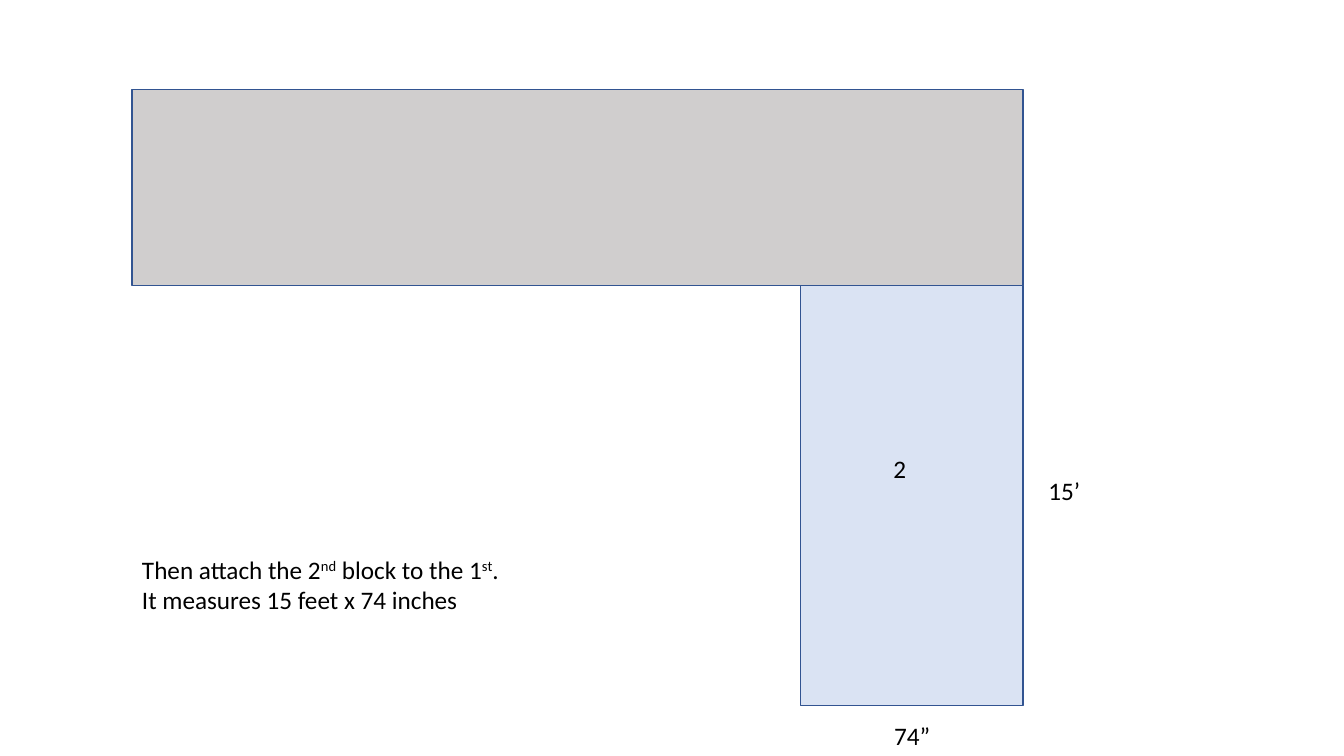
"""Build the slide that attaches the second block to the first."""
import pptx
import pptx.dml.color
import pptx.enum.shapes
import pptx.enum.text
import pptx.util

THEME = {
    "first": "D0CECE", "second": "DAE3F3", "edge": "325491",
    "text": "000000", "font": "Calibri", "size": 18, "line": 1,
}

deck = pptx.Presentation()
deck.slide_width = pptx.util.Inches(13.33)
deck.slide_height = pptx.util.Inches(7.5)
slide = deck.slides.add_slide(deck.slide_layouts[6])
col, row = deck.slide_width / 100, deck.slide_height / 100


def place(left, top, width, height):
    return [int(n) for n in (left * col, top * row, width * col, height * row)]


def tint(name):
    return pptx.dml.color.RGBColor.from_string(THEME[name])


left, top, long, deep = 9.83, 11.87, 66.3, 25.87
wide, tall = long / 4, 55.6
right, joint = left + long, top + deep

blocks = [
    ("first", left, top, long, deep),
    ("second", right - wide, joint, wide, tall),
]
for name, *area in blocks:
    block = slide.shapes.add_shape(
        pptx.enum.shapes.MSO_SHAPE.RECTANGLE, *place(*area))
    block.shadow.inherit = False
    block.fill.solid()
    block.fill.fore_color.rgb = tint(name)
    block.line.color.rgb = tint("edge")
    block.line.width = pptx.util.Pt(THEME["line"])

step = [["Then attach the 2", "nd", " block to the 1", "st", "."],
        ["It measures 15 feet x 74 inches"]]
labels = [
    ([["2"]], 66.47, 59.33, 0.98, 5.33, 0),
    (step, left, 72.67, 29.56, 9.47, 0.1),
    ([["15’"]], 77.27, 62.27, 3.9, 5.33, 0.1),
    ([["74”"]], 65.79, 94.67, 4.2, 5.33, 0.1),
]
for lines, *area, inset in labels:
    frame = slide.shapes.add_textbox(*place(*area)).text_frame
    frame.word_wrap = False
    frame.auto_size = pptx.enum.text.MSO_AUTO_SIZE.SHAPE_TO_FIT_TEXT
    frame.margin_left = frame.margin_right = pptx.util.Inches(inset)
    for index, parts in enumerate(lines):
        para = frame.add_paragraph() if index else frame.paragraphs[0]
        para.font.name = THEME["font"]
        para.font.size = pptx.util.Pt(THEME["size"])
        para.font.color.rgb = tint("text")
        for part in parts:
            run = para.add_run()
            run.text = part
            if part in ("nd", "st"):
                run.font._element.set("baseline", "30000")

deck.save("out.pptx")
